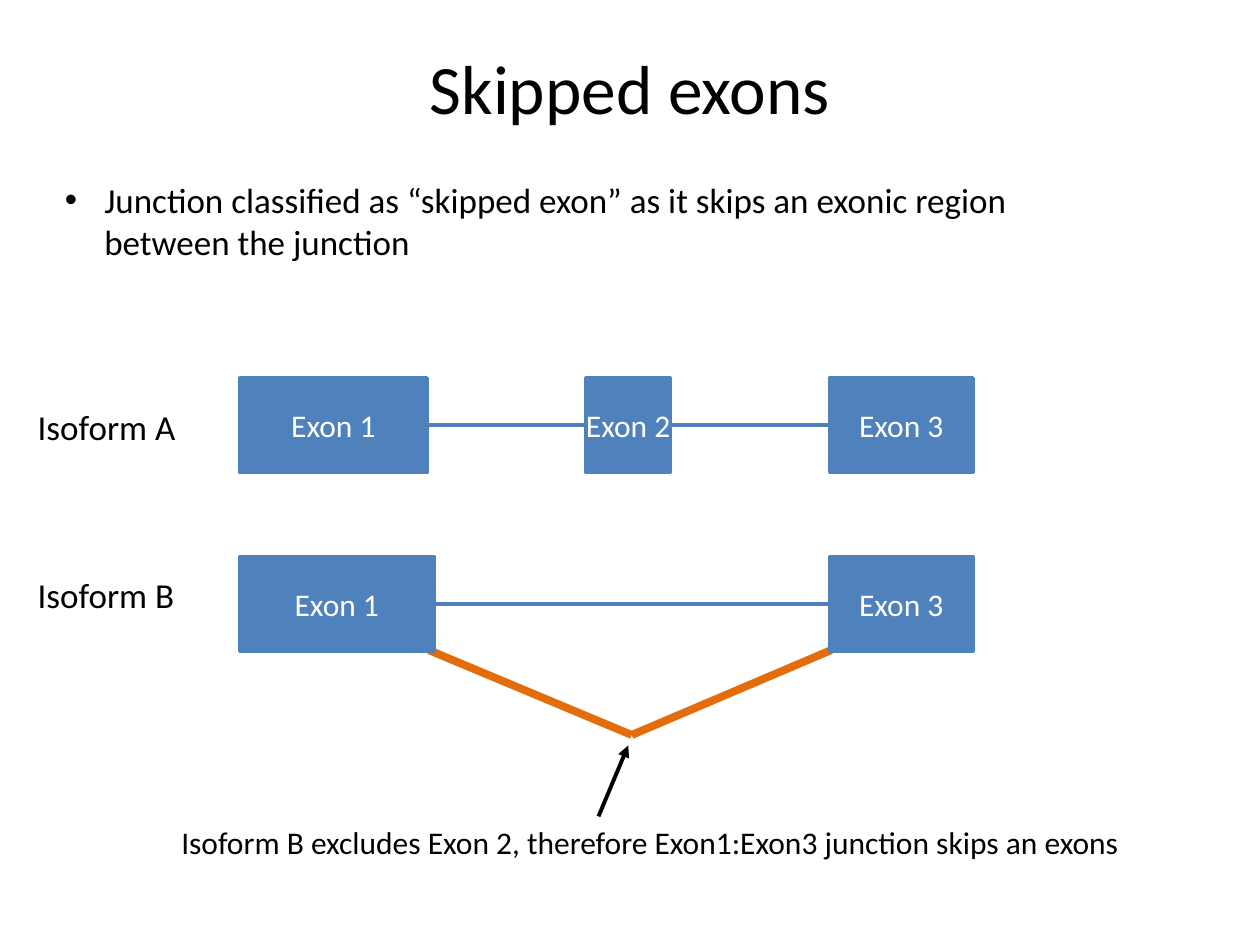
from dataclasses import dataclass

from lxml.etree import SubElement
from pptx import Presentation
from pptx.dml.color import RGBColor as RGB
from pptx.enum.shapes import MSO_CONNECTOR as Link, MSO_SHAPE as Shape
from pptx.enum.text import MSO_ANCHOR as Anchor, PP_ALIGN as Align
from pptx.oxml.ns import qn
from pptx.util import Pt


@dataclass(frozen=True)
class Theme:
    font: str = "Calibri"
    ink: str = "000000"
    pale: str = "FFFFFF"
    exon: str = "4F81BD"
    skip: str = "E46C0A"
    head: float = 39.6
    body: float = 20
    note: float = 18
    edge: float = 2
    rule: float = 2.25
    bold: float = 4.5


class Board:
    def __init__(self, deck, theme):
        self.theme = theme
        self.slide = deck.slides.add_slide(deck.slide_layouts[5])
        self.shapes = self.slide.shapes

    def add_run(self, para, words, size, color):
        run = para.add_run()
        run.text = words
        run.font.name = self.theme.font
        run.font.size = Pt(size)
        run.font.color.rgb = RGB.from_string(color)

    def title(self, words, x, y, w, h):
        item = self.shapes.title
        item.left, item.top, item.width, item.height = map(Pt, (x, y, w, h))
        frame = item.text_frame
        frame.vertical_anchor = Anchor.MIDDLE
        para = frame.paragraphs[0]
        para.alignment = Align.CENTER
        self.add_run(para, words, self.theme.head, self.theme.ink)

    def text(self, lines, x, y, w, h, size, gap=0, wrap=True):
        frame = self.shapes.add_textbox(*map(Pt, (x, y, w, h))).text_frame
        frame.word_wrap = wrap
        for i, words in enumerate(lines):
            para = frame.add_paragraph() if i else frame.paragraphs[0]
            if i:
                para.space_before = Pt(gap)
            self.add_run(para, words, size, self.theme.ink)
        return frame

    def bullet(self, words, x, y, w, h, indent):
        frame = self.text([words], x, y, w, h, self.theme.body)
        props = frame.paragraphs[0]._p.get_or_add_pPr()
        props.set("marL", str(Pt(indent)))
        props.set("indent", str(-Pt(indent)))
        SubElement(props, qn("a:buFont")).set("typeface", "Arial")
        SubElement(props, qn("a:buChar")).set("char", "•")

    def exon(self, words, x, y, w, h):
        box = self.shapes.add_shape(Shape.RECTANGLE, *map(Pt, (x, y, w, h)))
        box.shadow.inherit = False
        color = RGB.from_string(self.theme.exon)
        box.fill.solid()
        box.fill.fore_color.rgb = color
        box.line.color.rgb = color
        box.line.width = Pt(self.theme.edge)
        frame = box.text_frame
        frame.word_wrap = False
        frame.margin_left = frame.margin_right = 0
        frame.vertical_anchor = Anchor.MIDDLE
        para = frame.paragraphs[0]
        para.alignment = Align.CENTER
        self.add_run(para, words, self.theme.note, self.theme.pale)
        return box

    def line(self, start, end, color, width, arrow=False, group=None):
        home = group.shapes if group else self.shapes
        item = home.add_connector(Link.STRAIGHT, *map(Pt, start + end))
        item.line.color.rgb = RGB.from_string(color)
        item.line.width = Pt(width)
        if arrow:
            SubElement(item.line._ln, qn("a:tailEnd")).set("type", "triangle")
        SubElement(item._element.spPr, qn("a:effectLst"))
        return item

    def intron(self, left, right):
        item = self.line((0, 0), (0, 0), self.theme.exon, self.theme.rule)
        item.begin_connect(left, 3)
        item.end_connect(right, 1)

    def isoform(self, exons, y, h):
        boxes = [self.exon(name, x, y, w, h) for name, x, w in exons]
        for left, right in zip(boxes, boxes[1:]):
            self.intron(left, right)


def main():
    deck = Presentation()
    deck.slide_width, deck.slide_height = Pt(720), Pt(540)
    theme = Theme()
    board = Board(deck, theme)

    # Heading and definition
    board.title("Skipped exons", 36, 21.6, 648, 56)
    board.bullet("Junction classified as “skipped exon” as it skips "
                 "an exonic region between the junction",
                 30, 98.6, 624, 55.4, 22.5)

    # Skipping junction, behind the exons
    low = (361, 420)
    group = board.shapes.add_group_shape()
    for start, end in (((245, 371.5), low), (low, (475, 371.5))):
        board.line(start, end, theme.skip, theme.bold, group=group)

    # Isoforms: name, left and width of each exon
    last = ("Exon 3", 474, 82)
    board.isoform([("Exon 1", 137, 107), ("Exon 2", 335, 48), last], 216, 54)
    board.isoform([("Exon 1", 137, 111), last], 318, 54)
    board.text(["Isoform A", "Isoform B"], 14.4, 228, 108, 128,
               theme.body, gap=72)

    # Caption and its arrow
    board.text(["Isoform B excludes Exon 2, therefore Exon1:Exon3 "
                "junction skips an exons"],
               96.5, 466.5, 558, 29, theme.note, wrap=False)
    board.line((342, 466.5), (359, 426), theme.ink, theme.rule, arrow=True)

    deck.save("out.pptx")


if __name__ == "__main__":
    main()
